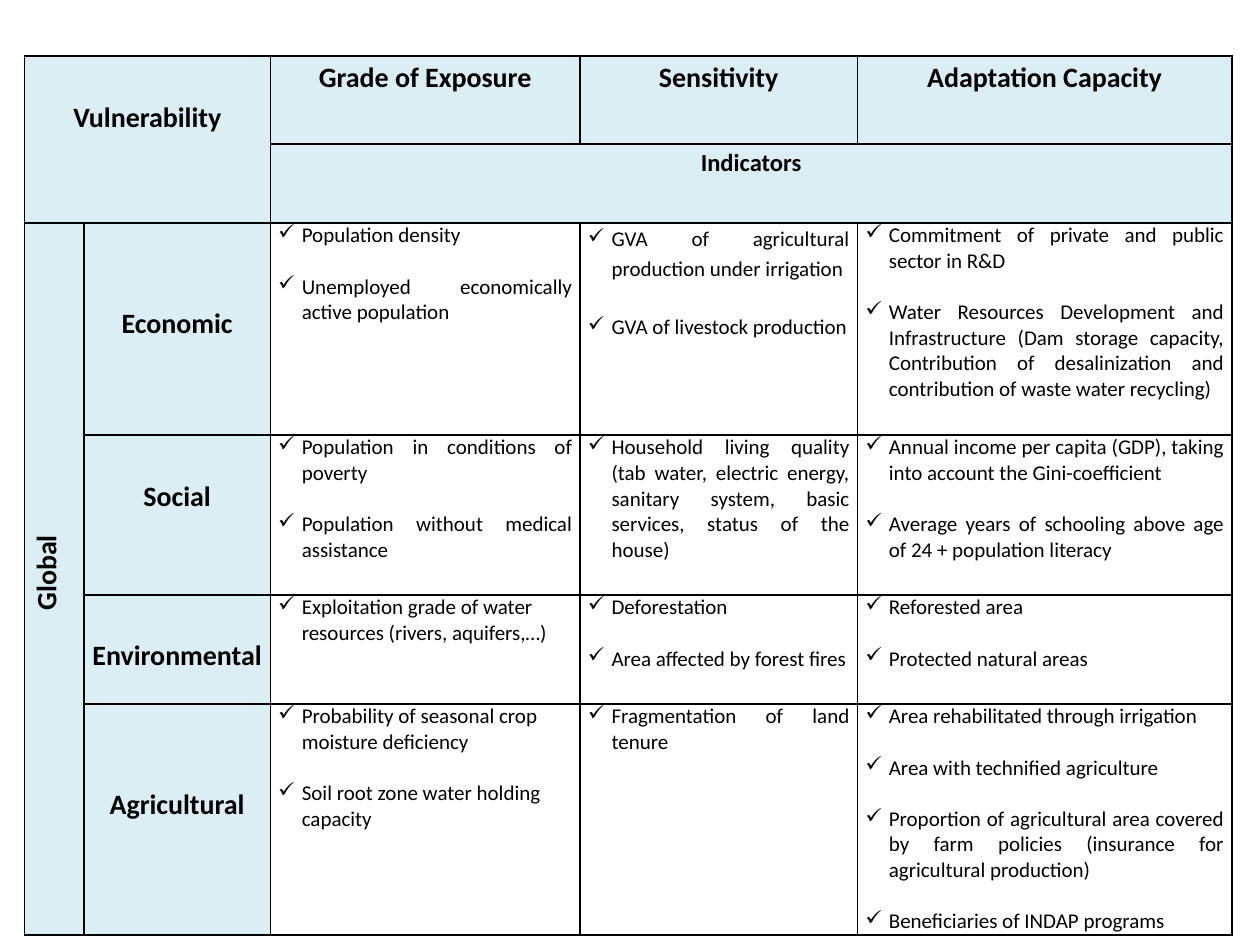
from lxml import etree
from pptx import Presentation
from pptx.dml.color import RGBColor
from pptx.enum import text
from pptx.oxml import ns
from pptx.util import Pt

BLACK = RGBColor(0, 0, 0)
PALE_BLUE = RGBColor(0xDB, 0xEE, 0xF4)
FONT = "Calibri"
CENTER, JUSTIFY, LEFT = text.PP_ALIGN.CENTER, text.PP_ALIGN.JUSTIFY, text.PP_ALIGN.LEFT

COLUMN_WIDTHS = [34, 106.5, 177, 158.5, 214]
ROW_HEIGHTS = [50.3, 45.1, 121.2, 91.4, 62.3, 132]
TABLE_LEFT, TABLE_TOP = 14, 32
HEADING_LINE = 22.45
BULLET_GAP = 14.65
BULLET_INDENT = 13.5
LOOSE_SPACING = 1.15

MERGES = [((0, 0), (1, 1)), ((1, 2), (1, 4)), ((2, 0), (5, 0))]

HEADINGS = [
    (0, 0, "Vulnerability", 16, 1),
    (0, 2, "Grade of Exposure", 16, 0),
    (0, 3, "Sensitivity", 16, 0),
    (0, 4, "Adaptation Capacity", 16, 0),
    (1, 2, "Indicators", 14, 0),
    (2, 0, "Global", 16, 0),
    (2, 1, "Economic", 16, 2),
    (3, 1, "Social", 16, 1),
    (4, 1, "Environmental", 16, 1),
    (5, 1, "Agricultural", 16, 2),
]

INDICATORS = [
    [
        ["Population density", "Unemployed economically active population"],
        ["GVA of agricultural production under irrigation", "GVA of livestock production"],
        ["Commitment of private and public sector in R&D",
         "Water Resources Development and Infrastructure (Dam storage capacity, "
         "Contribution of desalinization and contribution of waste water recycling)"],
    ],
    [
        ["Population in conditions of poverty", "Population without medical assistance"],
        ["Household living quality (tab water, electric energy, sanitary system, "
         "basic services, status of the house)"],
        ["Annual income per capita (GDP), taking into account the Gini-coefficient",
         "Average years of schooling above age of 24 + population literacy"],
    ],
    [
        ["Exploitation grade of water resources (rivers, aquifers,…)"],
        ["Deforestation", "Area affected by forest fires"],
        ["Reforested area", "Protected natural areas"],
    ],
    [
        ["Probability of seasonal crop moisture deficiency",
         "Soil root zone water holding capacity"],
        ["Fragmentation of land tenure"],
        ["Area rehabilitated through irrigation", "Area with technified agriculture",
         "Proportion of agricultural area covered by farm policies "
         "(insurance for agricultural production)",
         "Beneficiaries of INDAP programs"],
    ],
]
LEFT_ALIGNED = {(4, 2), (5, 2)}
LOOSE_CELLS = {(2, 3)}


def style_cell(cell):
    cell.margin_left = cell.margin_right = Pt(4.5)
    cell.margin_top = cell.margin_bottom = 0
    cell.fill.background()
    properties = cell._tc.get_or_add_tcPr()
    for position, side in enumerate(("lnL", "lnR", "lnT", "lnB")):
        line = etree.Element(ns.qn(f"a:{side}"), w=str(Pt(1)))
        fill = etree.SubElement(line, ns.qn("a:solidFill"))
        etree.SubElement(fill, ns.qn("a:srgbClr"), val=str(BLACK))
        properties.insert(position, line)


def style_paragraph(paragraph, size, bold, alignment):
    paragraph.alignment = alignment
    font = paragraph.font
    font.name, font.size, font.bold = FONT, Pt(size), bold
    font.color.rgb = BLACK


def add_check_mark(paragraph):
    properties = paragraph._p.get_or_add_pPr()
    properties.set("marL", str(Pt(BULLET_INDENT)))
    properties.set("indent", str(-Pt(BULLET_INDENT)))
    etree.SubElement(properties, ns.qn("a:buChar"), char="✓")


def fill_indicators(cell, items, alignment, loose):
    frame = cell.text_frame
    for index, item in enumerate(items):
        paragraph = frame.add_paragraph() if index else frame.paragraphs[0]
        paragraph.text = item
        add_check_mark(paragraph)
        style_paragraph(paragraph, 12, False, alignment)
        spacing = LOOSE_SPACING if loose else 1
        paragraph.line_spacing = spacing
        if index:
            paragraph.space_before = Pt(BULLET_GAP * spacing)


presentation = Presentation()
presentation.slide_width, presentation.slide_height = Pt(720), Pt(540)
slide = presentation.slides.add_slide(presentation.slide_layouts[6])
table = slide.shapes.add_table(
    len(ROW_HEIGHTS), len(COLUMN_WIDTHS), Pt(TABLE_LEFT), Pt(TABLE_TOP),
    Pt(sum(COLUMN_WIDTHS)), Pt(sum(ROW_HEIGHTS))).table
table.first_row = table.horz_banding = False
for column, width in zip(table.columns, COLUMN_WIDTHS):
    column.width = Pt(width)
for row, height in zip(table.rows, ROW_HEIGHTS):
    row.height = Pt(height)
for cell in table.iter_cells():
    style_cell(cell)
    style_paragraph(cell.text_frame.paragraphs[0], 12, False, LEFT)
for first, last in MERGES:
    table.cell(*first).merge(table.cell(*last))

for row, column, label, size, lines_above in HEADINGS:
    cell = table.cell(row, column)
    cell.fill.solid()
    cell.fill.fore_color.rgb = PALE_BLUE
    cell.margin_top = Pt(lines_above * HEADING_LINE)
    paragraph = cell.text_frame.paragraphs[0]
    paragraph.text = label
    paragraph.line_spacing = LOOSE_SPACING
    style_paragraph(paragraph, size, True, CENTER)

global_cell = table.cell(2, 0)
global_cell._tc.get_or_add_tcPr().set("vert", "vert270")
global_cell.text_frame.paragraphs[0]._p.get_or_add_pPr().set("marL", str(Pt(7)))

for row, groups in enumerate(INDICATORS, start=2):
    for column, items in enumerate(groups, start=2):
        place = (row, column)
        alignment = LEFT if place in LEFT_ALIGNED else JUSTIFY
        fill_indicators(table.cell(row, column), items, alignment, place in LOOSE_CELLS)

presentation.save("out.pptx")
